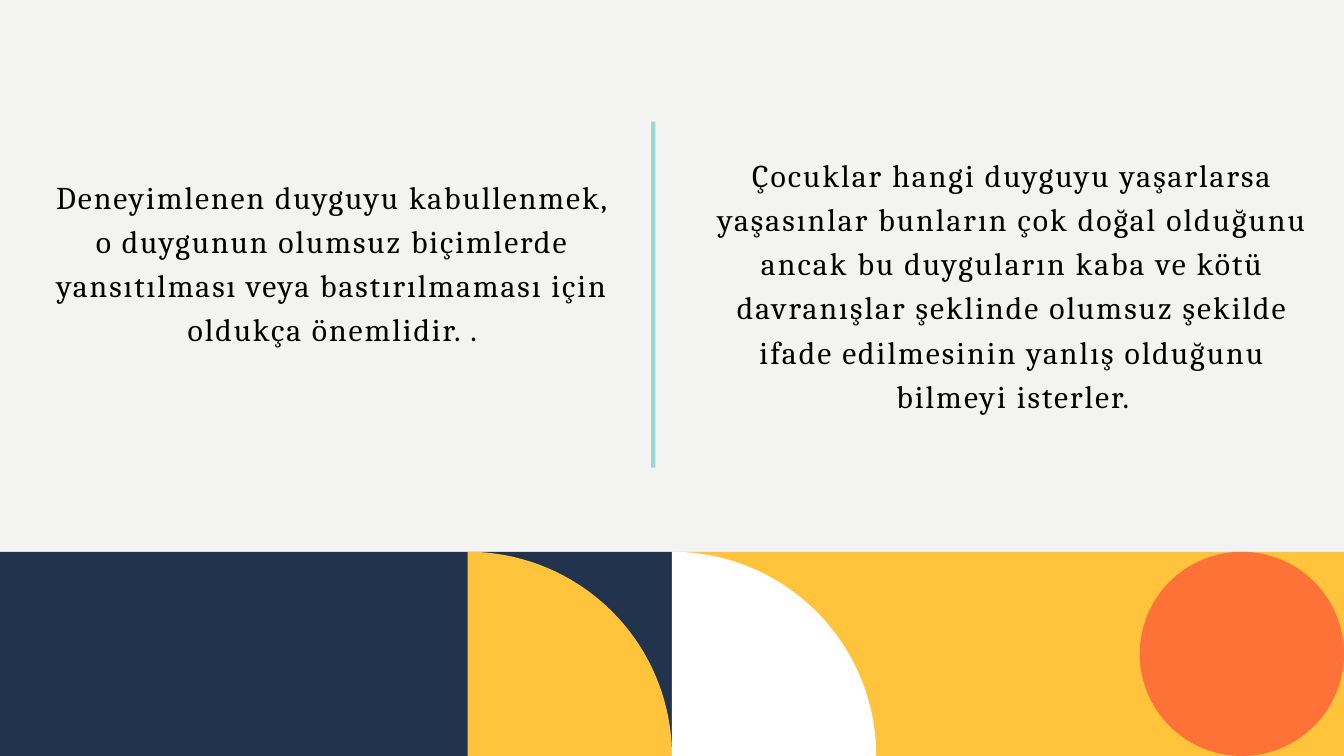
import math

import pptx
import pptx.dml.color
import pptx.enum.shapes
import pptx.enum.text
import pptx.util

Cm = pptx.util.Cm
Pt = pptx.util.Pt

COLORS = {
    "background": "F3F3F2",
    "navy": "22334D",
    "yellow": "FFC33C",
    "white": "FFFFFF",
    "orange": "FF7237",
    "teal": "9AD8D7",
    "text": "000000",
}
WIDTH, HEIGHT = 50.8, 28.58
MIDDLE = WIDTH / 2
BAND = 7.72
BAND_TOP = HEIGHT - BAND


def paint(shape, color):
    shape.fill.solid()
    shape.fill.fore_color.rgb = pptx.dml.color.RGBColor.from_string(COLORS[color])
    shape.line.fill.background()
    shape.shadow.inherit = False


presentation = pptx.Presentation()
presentation.slide_width = Cm(WIDTH)
presentation.slide_height = Cm(HEIGHT)
slide = presentation.slides.add_slide(presentation.slide_layouts[3])
background = slide.background.fill
background.solid()
background.fore_color.rgb = pptx.dml.color.RGBColor.from_string(COLORS["background"])

title = slide.shapes.title.element
title.getparent().remove(title)

RECTANGLE = pptx.enum.shapes.MSO_SHAPE.RECTANGLE
OVAL = pptx.enum.shapes.MSO_SHAPE.OVAL
for kind, left, top, width, height, color in [
    (RECTANGLE, MIDDLE, BAND_TOP, MIDDLE, BAND, "yellow"),
    (RECTANGLE, 0, BAND_TOP, MIDDLE, BAND, "navy"),
    (OVAL, WIDTH - BAND, BAND_TOP, BAND, BAND, "orange"),
    (RECTANGLE, 24.61, 4.6, 0.16, 13.08, "teal"),
]:
    shape = slide.shapes.add_shape(kind, Cm(left), Cm(top), Cm(width), Cm(height))
    paint(shape, color)

for left, color in [(MIDDLE - BAND, "yellow"), (MIDDLE, "white")]:
    arc = []
    for degrees in range(91):
        angle = math.radians(degrees)
        arc.append((Cm(left + BAND * math.sin(angle)), Cm(HEIGHT - BAND * math.cos(angle))))
    builder = slide.shapes.build_freeform(Cm(left), Cm(HEIGHT))
    builder.add_line_segments(arc, close=True)
    paint(builder.convert_to_shape(), color)

columns = [
    (1.96, 6.48, 21.23, 8.41, 210,
     "Deneyimlenen duyguyu kabullenmek, o duygunun olumsuz biçimlerde "
     "yansıtılması veya bastırılmaması için oldukça önemlidir. ."),
    (26.95, 5.66, 22.68, 10.08, 220,
     "Çocuklar hangi duyguyu yaşarlarsa yaşasınlar bunların çok doğal olduğunu "
     "ancak bu duyguların kaba ve kötü davranışlar şeklinde olumsuz şekilde "
     "ifade edilmesinin yanlış olduğunu bilmeyi isterler."),
]
for body, (left, top, width, height, spacing, text) in zip(slide.placeholders, columns):
    body.left, body.top = Cm(left), Cm(top)
    body.width, body.height = Cm(width), Cm(height)
    frame = body.text_frame
    frame.margin_left = frame.margin_top = frame.margin_right = frame.margin_bottom = 0
    frame.word_wrap = True
    frame.auto_size = pptx.enum.text.MSO_AUTO_SIZE.NONE
    frame.vertical_anchor = pptx.enum.text.MSO_ANCHOR.TOP
    paragraph = frame.paragraphs[0]
    paragraph.alignment = pptx.enum.text.PP_ALIGN.CENTER
    paragraph.line_spacing = 1.16
    paragraph.space_before = Pt(1)
    properties = paragraph._p.get_or_add_pPr()
    properties.set("marL", "0")
    properties.set("indent", "0")
    properties.append(pptx.oxml.parse_xml(
        '<a:buNone xmlns:a="http://schemas.openxmlformats.org/drawingml/2006/main"/>'))
    run = paragraph.add_run()
    run.text = text
    run.font.name = "Cambria"
    run.font.size = Pt(34)
    run.font.color.rgb = pptx.dml.color.RGBColor.from_string(COLORS["text"])
    run._r.get_or_add_rPr().set("spc", str(spacing))

presentation.save("out.pptx")
